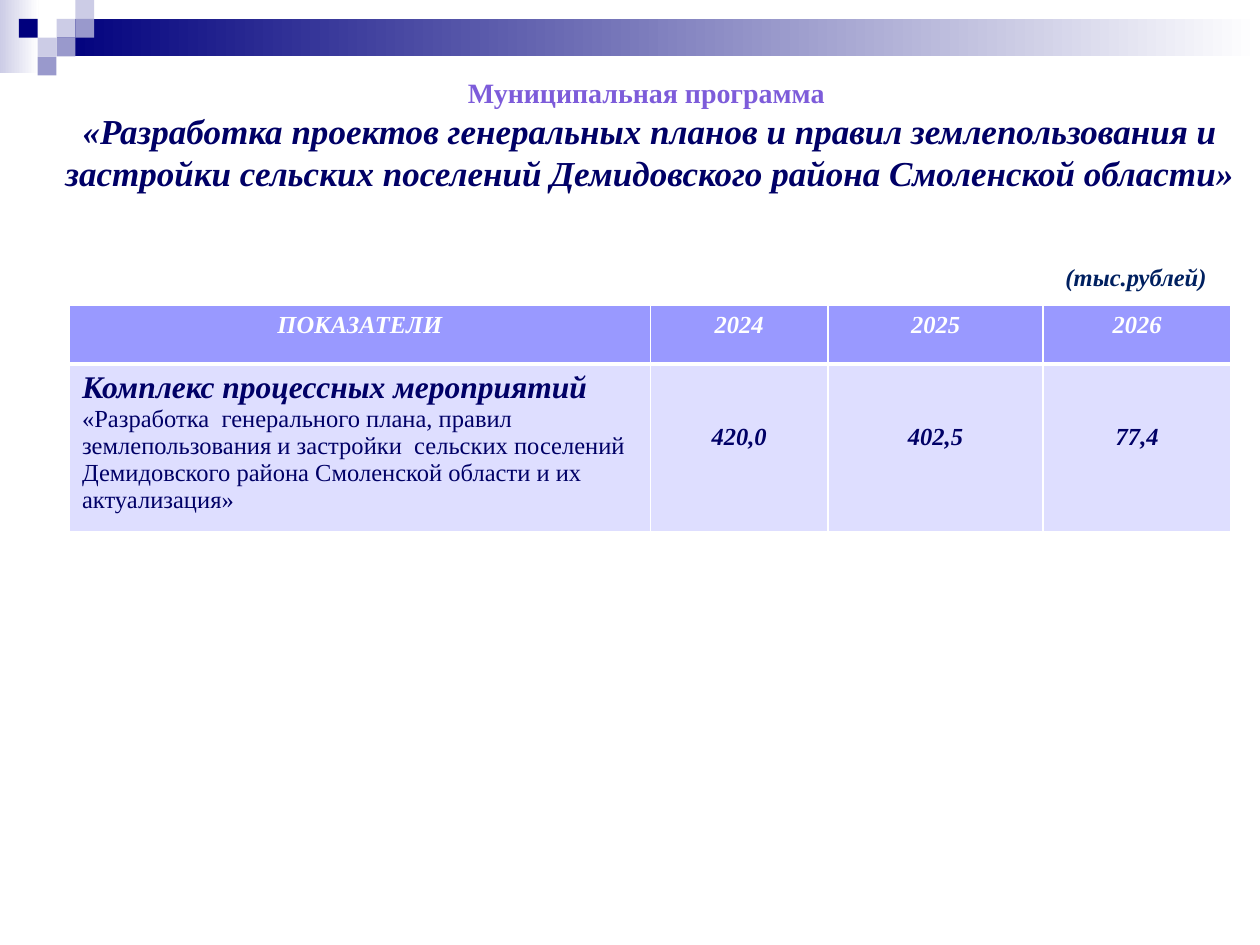
from lxml import etree
from pptx import Presentation
from pptx.dml.color import RGBColor
from pptx.enum.shapes import MSO_SHAPE
from pptx.enum.text import PP_ALIGN
from pptx.oxml.ns import qn
from pptx.util import Cm, Pt

RECT = MSO_SHAPE.RECTANGLE
LEFT, CENTER = PP_ALIGN.LEFT, PP_ALIGN.CENTER
FONT = "Times New Roman"

WHITE = RGBColor(0xFF, 0xFF, 0xFF)
NAVY = RGBColor(0x00, 0x00, 0x7D)
LILAC = RGBColor(0xCC, 0xCC, 0xE6)
MAUVE = RGBColor(0x99, 0x99, 0xCC)
VIOLET = RGBColor(0x7D, 0x5C, 0xDA)
INK = RGBColor(0x00, 0x00, 0x66)
UNIT_BLUE = RGBColor(0x00, 0x20, 0x60)
HEAD_FILL = RGBColor(0x99, 0x99, 0xFF)
BODY_FILL = RGBColor(0xDE, 0xDE, 0xFF)


def add_text(p, text, size=14, color=INK, bold=True, italic=True, align=CENTER):
    p.alignment = align
    r = p.add_run()
    r.text = text
    r.font.name = FONT
    r.font.size = Pt(size)
    r.font.color.rgb = color
    r.font.bold = bold
    r.font.italic = italic


def add_rect(x, y, w, h, color, fade=False):
    sp = s.shapes.add_shape(RECT, Cm(x), Cm(y), Cm(w), Cm(h))
    sp.shadow.inherit = False
    sp.line.fill.background()
    if fade:
        sp.fill.gradient()
        sp.fill.gradient_angle = 0
        for stop, stop_color in zip(sp.fill.gradient_stops, (color, WHITE)):
            stop.color.rgb = stop_color
    else:
        sp.fill.solid()
        sp.fill.fore_color.rgb = color


prs = Presentation()
prs.slide_width, prs.slide_height = Cm(25.4), Cm(19.05)
s = prs.slides.add_slide(prs.slide_layouts[6])

# Fading bands along the top
add_rect(0, 0, 0.78, 1.48, LILAC, fade=True)
add_rect(1.14, 0.38, 24.26, 0.76, NAVY, fade=True)

# Mosaic of squares: column, row, colour
SQUARE = 0.38
mosaic = [(3, 1, LILAC), (4, 0, LILAC), (4, 1, MAUVE), (2, 2, LILAC),
          (1, 1, NAVY), (3, 2, MAUVE), (2, 3, MAUVE)]
for col, row, color in mosaic:
    add_rect(col * SQUARE, row * SQUARE, SQUARE, SQUARE, color)

# Title
tf = s.shapes.add_textbox(Cm(0.8), Cm(1.4), Cm(24.6), Cm(2.64)).text_frame
tf.word_wrap = True
add_text(tf.paragraphs[0], "Муниципальная программа ", size=16, color=VIOLET,
         italic=False)
add_text(tf.add_paragraph(),
         "«Разработка проектов генеральных планов и правил землепользования и "
         "застройки сельских поселений Демидовского района Смоленской области»",
         size=20)

# Table
head = ["ПОКАЗАТЕЛИ", "2024", "2025", "2026"]
values = ["420,0", "402,5", "77,4"]
widths = [11.71, 3.58, 4.34, 3.79]
heights = [1.19, 3.38]
table = s.shapes.add_table(2, 4, Cm(1.4), Cm(6.15), Cm(sum(widths)),
                           Cm(sum(heights))).table
for column, width in zip(table.columns, widths):
    column.width = Cm(width)
for row, height in zip(table.rows, heights):
    row.height = Cm(height)

for cell, text in zip(table.rows[0].cells, head):
    add_text(cell.text_frame.paragraphs[0], text, color=WHITE)

p = table.cell(1, 0).text_frame.paragraphs[0]
add_text(p, "Комплекс процессных мероприятий ", size=18, align=LEFT)
add_text(p, "«Разработка  генерального плана, правил землепользования и застройки  "
            "сельских поселений Демидовского района Смоленской области и их "
            "актуализация»", bold=False, italic=False, align=LEFT)

for col, text in enumerate(values, 1):
    cell = table.cell(1, col)
    cell.margin_top = Cm(1.2)
    add_text(cell.text_frame.paragraphs[0], text)

# Cell fills and white borders, thicker between header and body
for row, (fill, top, bottom) in enumerate([(HEAD_FILL, 1, 3), (BODY_FILL, 3, 1)]):
    for cell in table.rows[row].cells:
        cell.fill.solid()
        cell.fill.fore_color.rgb = fill
        tcPr = cell._tc.get_or_add_tcPr()
        borders = [("a:lnL", 1), ("a:lnR", 1), ("a:lnT", top), ("a:lnB", bottom)]
        for i, (tag, width) in enumerate(borders):
            ln = etree.Element(qn(tag), w=str(Pt(width)))
            solid = etree.SubElement(ln, qn("a:solidFill"))
            etree.SubElement(solid, qn("a:srgbClr"), val=str(WHITE))
            tcPr.insert(i, ln)

# Unit of measure
tf = s.shapes.add_textbox(Cm(21.23), Cm(5.16), Cm(3.38), Cm(0.86)).text_frame
tf.word_wrap = False
add_text(tf.paragraphs[0], "(тыс.рублей)", color=UNIT_BLUE, align=LEFT)

prs.save("out.pptx")
